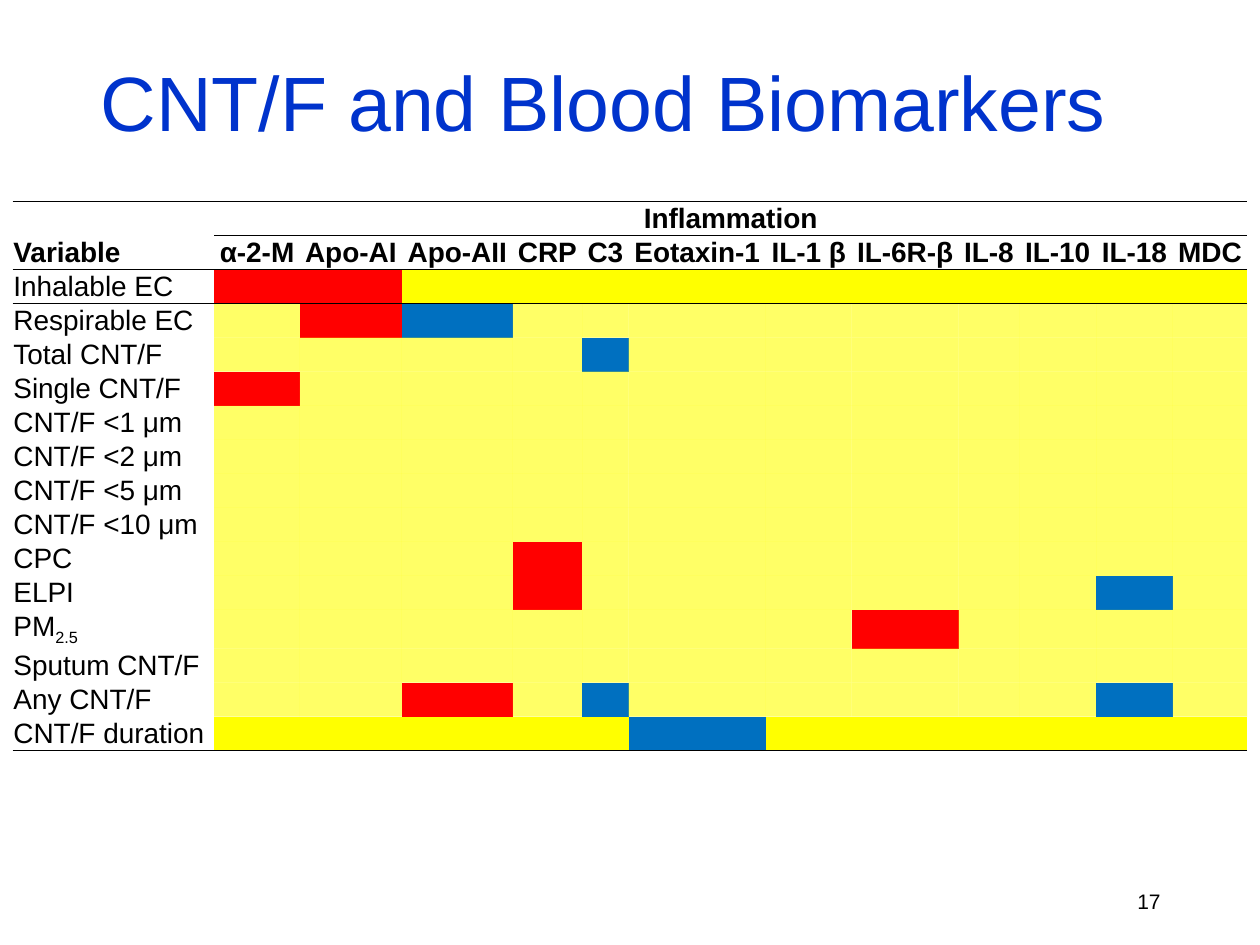
from lxml import etree
from pptx import Presentation
from pptx.dml.color import RGBColor
from pptx.enum.text import MSO_ANCHOR, PP_ALIGN
from pptx.oxml.ns import qn
from pptx.util import Inches, Pt

LEFT, CENTER, RIGHT = PP_ALIGN.LEFT, PP_ALIGN.CENTER, PP_ALIGN.RIGHT
MIDDLE = MSO_ANCHOR.MIDDLE

BLACK = RGBColor(0x00, 0x00, 0x00)
TITLE_BLUE = RGBColor(0x00, 0x33, 0xCC)
RED = RGBColor(0xFF, 0x00, 0x00)
BLUE = RGBColor(0x00, 0x70, 0xC0)
YELLOW = RGBColor(0xFF, 0xFF, 0x00)

FONT = "Arial"
TABLE_TEXT_SIZE = 16
PLAIN_TABLE_STYLE = "{2D5ABB26-0587-4C30-8999-92F81FD0307C}"
CELL_FORMAT = {
    "margin_left": Pt(0.5), "margin_right": Pt(0.5),
    "margin_top": Pt(0.25), "margin_bottom": 0,
    "vertical_anchor": MIDDLE,
}

LABEL_WIDTH = 1.6
MARKER_WIDTHS = {
    "α-2-M": 0.68, "Apo-AI": 0.81, "Apo-AII": 0.88, "CRP": 0.55,
    "C3": 0.37, "Eotaxin-1": 1.09, "IL-1 β": 0.68, "IL-6R-β": 0.85,
    "IL-8": 0.48, "IL-10": 0.61, "IL-18": 0.61, "MDC": 0.59,
}
ROW_HEIGHT, SUBSCRIPT_ROW_HEIGHT = 0.26, 0.29

# Each exposure: label, subscript, and the markers that are not yellow
EXPOSURES = [
    ("Inhalable EC", "", {"α-2-M": RED, "Apo-AI": RED}),
    ("Respirable EC", "", {"Apo-AI": RED, "Apo-AII": BLUE}),
    ("Total CNT/F", "", {"C3": BLUE}),
    ("Single CNT/F", "", {"α-2-M": RED}),
    ("CNT/F <1 μm", "", {}),
    ("CNT/F <2 μm", "", {}),
    ("CNT/F <5 μm", "", {}),
    ("CNT/F <10 μm", "", {}),
    ("CPC", "", {"CRP": RED}),
    ("ELPI", "", {"CRP": RED, "IL-18": BLUE}),
    ("PM", "2.5", {"IL-6R-β": RED}),
    ("Sputum CNT/F", "", {}),
    ("Any CNT/F", "", {"Apo-AII": RED, "C3": BLUE, "IL-18": BLUE}),
    ("CNT/F duration", "", {"Eotaxin-1": BLUE}),
]


def set_attributes(target, values):
    for name, value in values.items():
        setattr(target, name, value)


def add_run(paragraph, text, size, color=BLACK, bold=False):
    run = paragraph.add_run()
    run.text = text
    set_attributes(run.font, {"name": FONT, "size": Pt(size), "bold": bold})
    run.font.color.rgb = color
    return run


def add_text(slide, box, text, size, color, alignment):
    shape = slide.shapes.add_textbox(*map(Inches, box))
    frame = shape.text_frame
    set_attributes(frame, {"word_wrap": True, "vertical_anchor": MIDDLE})
    paragraph = frame.paragraphs[0]
    paragraph.alignment = alignment
    add_run(paragraph, text, size, color)


def write_cell(cell, text, alignment=LEFT, bold=False):
    paragraph = cell.text_frame.paragraphs[0]
    paragraph.alignment = alignment
    return add_run(paragraph, text, TABLE_TEXT_SIZE, bold=bold)


def add_rule(cell, *edges):
    """Draw black 1 pt borders on the given edges, "T" before "B"."""
    properties = cell._tc.get_or_add_tcPr()
    for edge in edges:
        line = etree.SubElement(properties, qn(f"a:ln{edge}"), w=str(Pt(1)))
        fill = etree.SubElement(line, qn("a:solidFill"))
        etree.SubElement(fill, qn("a:srgbClr"), val=str(BLACK))


def shade(cell, color):
    """Fill a marker cell; yellow, the neutral colour, is 60 % opaque."""
    cell.fill.solid()
    cell.fill.fore_color.rgb = color
    if color == YELLOW:
        tint = cell._tc.tcPr.find(".//" + qn("a:srgbClr"))
        etree.SubElement(tint, qn("a:alpha"), val="60000")


def add_plain_table(slide, left, top, widths, heights):
    shape = slide.shapes.add_table(
        len(heights), len(widths), Inches(left), Inches(top),
        Inches(sum(widths)), Inches(sum(heights)))
    table = shape.table
    set_attributes(table, {"first_row": False, "horz_banding": False})
    table._tbl.tblPr.find(qn("a:tableStyleId")).text = PLAIN_TABLE_STYLE
    for column, width in zip(table.columns, widths):
        column.width = Inches(width)
    for row, height in zip(table.rows, heights):
        row.height = Inches(height)
    for cell in table.iter_cells():
        set_attributes(cell, CELL_FORMAT)
        # Keeps empty cells from stretching their row
        etree.SubElement(cell.text_frame.paragraphs[0]._p,
                         qn("a:endParaRPr"), sz=str(TABLE_TEXT_SIZE * 100))
    return table


def fill_header(table):
    last_column = len(MARKER_WIDTHS)
    add_rule(table.cell(0, 0), "T")
    for column in range(1, last_column + 1):
        add_rule(table.cell(0, column), "T", "B")
    group = table.cell(0, 1)
    group.merge(table.cell(0, last_column))
    write_cell(group, "Inflammation", CENTER, bold=True)

    variable = table.cell(1, 0)
    write_cell(variable, "Variable", bold=True)
    add_rule(variable, "B")
    for column, marker in enumerate(MARKER_WIDTHS, 1):
        cell = table.cell(1, column)
        write_cell(cell, marker, CENTER, bold=True)
        add_rule(cell, "T", "B")


def fill_exposure(table, row, label, subscript, highlights, edges):
    for column in range(len(MARKER_WIDTHS) + 1):
        add_rule(table.cell(row, column), *edges)
    label_cell = table.cell(row, 0)
    write_cell(label_cell, label)
    if subscript:
        run = write_cell(label_cell, subscript)
        run.font._element.set("baseline", "-25000")
    for column, marker in enumerate(MARKER_WIDTHS, 1):
        shade(table.cell(row, column), highlights.get(marker, YELLOW))


def add_biomarker_table(slide, left, top):
    heights = [ROW_HEIGHT] * 2 + [
        SUBSCRIPT_ROW_HEIGHT if subscript else ROW_HEIGHT
        for _, subscript, _ in EXPOSURES]
    widths = [LABEL_WIDTH, *MARKER_WIDTHS.values()]
    table = add_plain_table(slide, left, top, widths, heights)
    fill_header(table)
    edges_by_row = {2: "T", len(heights) - 1: "B"}
    for row, exposure in enumerate(EXPOSURES, 2):
        fill_exposure(table, row, *exposure, edges_by_row.get(row, ""))


def main():
    presentation = Presentation()
    set_attributes(presentation, {"slide_width": Inches(10),
                                  "slide_height": Inches(7.5)})
    slide = presentation.slides.add_slide(presentation.slide_layouts[6])
    add_text(slide, (0.7, 0.3, 8.6, 1), "CNT/F and Blood Biomarkers",
             44, TITLE_BLUE, LEFT)
    add_text(slide, (7.06, 6.95, 2.25, 0.4), "17", 12, BLACK, RIGHT)
    add_biomarker_table(slide, 0.1, 1.6)
    presentation.save("out.pptx")


if __name__ == "__main__":
    main()
